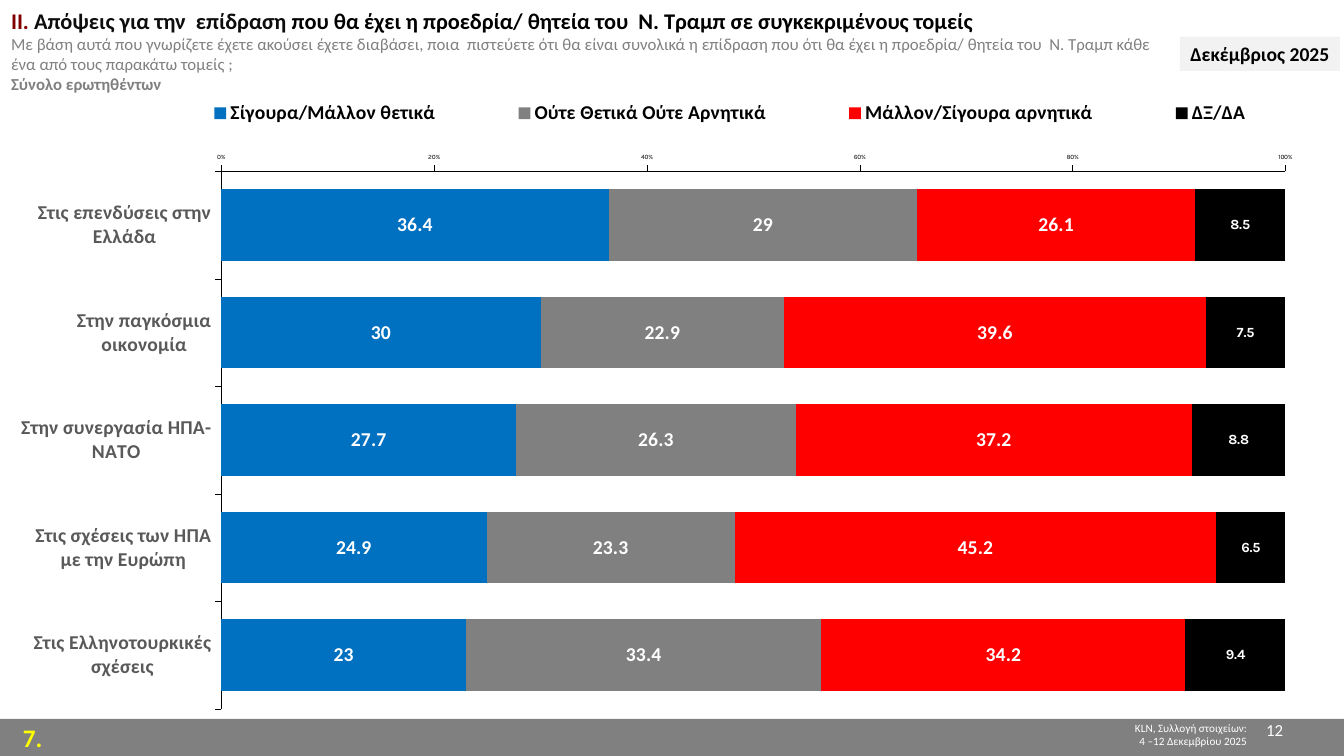
from dataclasses import dataclass

from lxml.etree import SubElement
from pptx import Presentation
from pptx.chart.data import CategoryChartData
from pptx.dml.color import RGBColor
from pptx.enum.chart import XL_CHART_TYPE as ChartType, XL_LEGEND_POSITION as LegendPos
from pptx.enum.chart import XL_TICK_MARK as Tick
from pptx.enum.shapes import MSO_SHAPE as Preset
from pptx.enum.text import MSO_ANCHOR as Anchor, PP_ALIGN as Align
from pptx.oxml.ns import qn
from pptx.util import Pt


@dataclass(frozen=True)
class Theme:
    text_font: str = "Calibri"
    chart_font: str = "Karla"
    white: str = "FFFFFF"
    black: str = "000000"
    ink: str = "0D0D0D"
    gray: str = "808080"
    label: str = "595959"
    tag: str = "F2F2F2"
    maroon: str = "800000"
    yellow: str = "FFFF00"
    blue: str = "0070C0"
    red: str = "FF0000"
    heading: float = 16
    section: float = 18
    body: float = 12
    chart_text: float = 14
    small_value: float = 10
    credit: float = 8
    scale: float = 4.7


THEME = Theme()
EMU_PER_PX = 9071.43  # 100.8 px to the inch

AREAS = ["Στις επενδύσεις στην Ελλάδα", "Στην παγκόσμια οικονομία",
         "Στην συνεργασία ΗΠΑ-ΝΑΤΟ", "Στις σχέσεις των ΗΠΑ με την Ευρώπη",
         "Στις Ελληνοτουρκικές σχέσεις"]
ANSWERS = [  # name, percentages, bar colour, value font, value size
    ("Σίγουρα/Μάλλον θετικά", (36.4, 30, 27.7, 24.9, 23),
     THEME.blue, THEME.text_font, THEME.chart_text),
    ("Ούτε Θετικά Ούτε Αρνητικά", (29, 22.9, 26.3, 23.3, 33.4),
     THEME.gray, THEME.text_font, THEME.chart_text),
    ("Μάλλον/Σίγουρα αρνητικά", (26.1, 39.6, 37.2, 45.2, 34.2),
     THEME.red, THEME.text_font, THEME.chart_text),
    ("ΔΞ/ΔΑ", (8.5, 7.5, 8.8, 6.5, 9.4),
     THEME.black, THEME.chart_font, THEME.small_value),
]


def px(length):
    return round(length * EMU_PER_PX)


def apply(target, values):
    for attribute, value in values.items():
        setattr(target, attribute, value)


def paint(fill, color):
    fill.solid()
    fill.fore_color.rgb = RGBColor.from_string(color)


def style(font, size, color, bold=False, name=THEME.text_font):
    apply(font, {"size": Pt(size), "bold": bold, "name": name})
    font.color.rgb = RGBColor.from_string(color)


def write(frame, lines, size, color, bold=False, align=Align.LEFT, anchor=Anchor.TOP, wrap=True):
    apply(frame, {"word_wrap": wrap, "vertical_anchor": anchor})
    for index, line in enumerate(lines):
        paragraph = frame.add_paragraph() if index else frame.paragraphs[0]
        paragraph.alignment = align
        run = paragraph.add_run()
        run.text = line
        style(run.font, size, color, bold)


def add_panel(slide, box, color):
    panel = slide.shapes.add_shape(Preset.RECTANGLE, *map(px, box))
    panel.shadow.inherit = False
    paint(panel.fill, color)
    panel.line.fill.background()
    return panel


def add_footer(slide, box):
    left, top, width, height = box
    add_panel(slide, box, THEME.gray)
    notes = [  # offset, rise, width, lines, size, colour, bold, alignment
        (966, 3, 291, ["KLN, Συλλογή στοιχείων:", "4 –12 Δεκεμβρίου 2025"],
         THEME.credit, THEME.white, False, Align.RIGHT),
        (13, 2, 68, ["7."], THEME.section, THEME.yellow, True, Align.LEFT),
        (1013, 4, 280, ["12"], THEME.body, THEME.white, False, Align.RIGHT),
    ]
    for offset, rise, note_width, lines, size, color, bold, align in notes:
        note = slide.shapes.add_textbox(px(left + offset), px(top - rise),
                                        px(note_width), px(height + rise))
        write(note.text_frame, lines, size, color, bold, align)


def add_heading(slide, box):
    title = slide.shapes.title
    apply(title, dict(zip(("left", "top", "width", "height"), map(px, box))))
    paint(title.fill, THEME.white)
    frame = title.text_frame
    apply(frame, {"word_wrap": True, "vertical_anchor": Anchor.TOP})
    paragraph = frame.paragraphs[0]
    apply(paragraph, {"alignment": Align.LEFT, "line_spacing": 1.0, "space_before": Pt(0)})
    rows = [
        [("II. ", THEME.heading, THEME.maroon, True),
         ("Απόψεις για την  επίδραση ", THEME.heading, THEME.ink, True),
         ("που θα έχει η προεδρία/ θητεία του  Ν. Τραμπ σε συγκεκριμένους τομείς",
          THEME.heading, THEME.black, True)],
        [("Με βάση αυτά που γνωρίζετε έχετε ακούσει έχετε διαβάσει, ποια  πιστεύετε ότι θα είναι "
          "συνολικά η επίδραση που ότι θα έχει η προεδρία/ θητεία του  Ν. Τραμπ κάθε ένα από τους "
          "παρακάτω τομείς ;", THEME.body, THEME.gray, False)],
        [("Σύνολο ερωτηθέντων", THEME.body, THEME.gray, True)],
    ]
    for index, row in enumerate(rows):
        if index:
            paragraph.add_line_break()
        for text, size, color, bold in row:
            run = paragraph.add_run()
            run.text = text
            style(run.font, size, color, bold)


def set_layout(parent, before, position, inner=False):
    """Places a chart part by fractions of the chart area."""
    for old in parent.findall(qn("c:layout")):
        parent.remove(old)
    layout = SubElement(parent, qn("c:layout"))
    manual = SubElement(layout, qn("c:manualLayout"))
    settings = {"layoutTarget": "inner"} if inner else {}
    settings |= {"xMode": "edge", "yMode": "edge"} | dict(zip("xywh", position))
    for tag, value in settings.items():
        SubElement(manual, qn(f"c:{tag}")).set("val", str(value))
    parent.insert(before, layout)


def add_answers_chart(slide, box):
    data = CategoryChartData()
    data.categories = AREAS
    for name, values, *_ in ANSWERS:
        data.add_series(name, values)
    chart = slide.shapes.add_chart(ChartType.BAR_STACKED_100, *map(px, box), data).chart
    style(chart.font, THEME.credit, THEME.black, True, THEME.chart_font)
    apply(chart, {"has_title": False, "has_legend": True})

    # Bars and their values
    plot = chart.plots[0]
    apply(plot, {"gap_width": 50, "overlap": 100, "vary_by_categories": False})
    for series, (_, _, color, font, size) in zip(plot.series, ANSWERS):
        paint(series.format.fill, color)
        labels = series.data_labels
        apply(labels, {"show_value": True, "number_format": "General",
                       "number_format_is_linked": False})
        style(labels.font, size, THEME.white, True, font)

    # Axes
    areas, percent = chart.category_axis, chart.value_axis
    for axis in (areas, percent):
        apply(axis, {"major_tick_mark": Tick.OUTSIDE, "minor_tick_mark": Tick.NONE,
                     "has_major_gridlines": False})
        axis.format.line.width = Pt(0.15)
        axis.format.line.color.rgb = RGBColor.from_string(THEME.black)
    areas.reverse_order = True
    apply(percent, {"minimum_scale": 0, "maximum_scale": 1, "major_unit": 0.2})
    apply(percent.tick_labels, {"number_format": "0%", "number_format_is_linked": False})
    style(areas.tick_labels.font, THEME.chart_text, THEME.label, True)
    style(percent.tick_labels.font, THEME.scale, THEME.black, False, THEME.chart_font)
    # An explicit zero rotation lets the area names wrap
    area_body = areas._element.find(qn("c:txPr")).find(qn("a:bodyPr"))
    for key, value in {"rot": "0", "vert": "horz"}.items():
        area_body.set(key, value)

    # Legend and plot position
    legend = chart.legend
    apply(legend, {"position": LegendPos.RIGHT, "include_in_layout": False})
    style(legend.font, THEME.chart_text, THEME.black, True)
    set_layout(legend._element, 1, (0.09, 0.04, 0.91, 0.06))
    plot_area = chart._chartSpace.chart.plotArea
    set_layout(plot_area, 0, (0.154, 0.16, 0.818, 0.832), inner=True)


def add_date_tag(slide, box):
    tag = add_panel(slide, box, THEME.tag)
    write(tag.text_frame, ["Δεκέμβριος 2025"], THEME.chart_text, THEME.black, True,
          Align.CENTER, Anchor.MIDDLE, wrap=False)


def main():
    deck = Presentation()
    apply(deck, {"slide_width": px(1344), "slide_height": px(756)})
    slide = deck.slides.add_slide(deck.slide_layouts[5])
    add_footer(slide, (0, 719, 1344, 37))
    add_heading(slide, (1, 2, 1187, 126))
    add_answers_chart(slide, (21, 68, 1301, 646))
    add_date_tag(slide, (1180, 37, 160, 34))
    deck.save("out.pptx")


if __name__ == "__main__":
    main()
